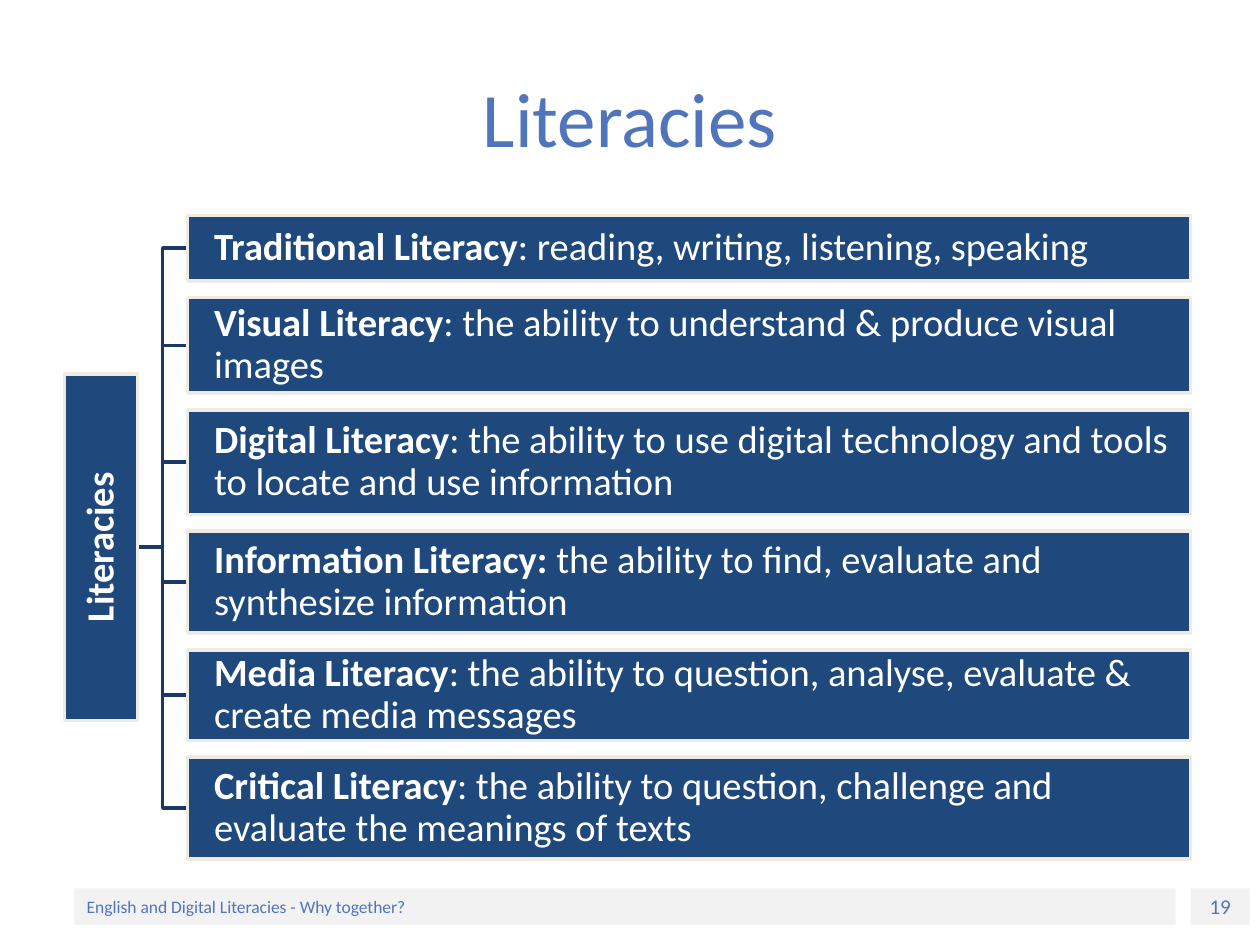
from pptx import Presentation
from pptx.dml.color import RGBColor
from pptx.enum.shapes import MSO_SHAPE
from pptx.enum.text import MSO_ANCHOR, PP_ALIGN
from pptx.util import Pt

RECT = MSO_SHAPE.RECTANGLE
MIDDLE = MSO_ANCHOR.MIDDLE
LEFT, CENTER = PP_ALIGN.LEFT, PP_ALIGN.CENTER

BLUE = RGBColor(0x50, 0x75, 0xBC)
NAVY = RGBColor(0x1F, 0x49, 0x7D)
DARK = RGBColor(0x19, 0x3A, 0x64)
CREAM = RGBColor(0xEE, 0xEC, 0xE1)
GRAY = RGBColor(0xF2, 0xF2, 0xF2)
WHITE = RGBColor(0xFF, 0xFF, 0xFF)

TITLE = "Literacies"
FOOTER = "English and Digital Literacies - Why together?"
NUMBER = "19"
ROOT = "Literacies"
ITEMS = [
    ("Traditional Literacy", ": reading, writing, listening, speaking", 37.4),
    ("Visual Literacy", ": the ability to understand & produce visual images", 54.7),
    ("Digital Literacy", ": the ability to use digital technology and tools "
     "to locate and use information", 59.8),
    ("Information Literacy: ", "the ability to find, evaluate and "
     "synthesize information", 58.3),
    ("Media Literacy", ": the ability to question, analyse, evaluate & "
     "create media messages", 51.8),
    ("Critical Literacy", ": the ability to question, challenge and "
     "evaluate the meanings of texts", 58.3),
]

TOP, GAP = 123.1, 9.5
ITEM_X, ITEM_W = 107.3, 573.1
ROOT_W, ROOT_H = 198, 41.8
ROOT_X, ROOT_Y = 57.8, 312.7
STEM_X = ROOT_X + ROOT_H / 2
BEND_X = (STEM_X + ITEM_X) / 2


def write(shape, bold, plain="", size=22, color=WHITE, align=LEFT,
          heavy=True, inset=(1.4, 1.4), space=0.9):
    frame = shape.text_frame
    frame.word_wrap = True
    frame.vertical_anchor = MIDDLE
    frame.margin_left, frame.margin_right = map(Pt, inset)
    frame.margin_top = frame.margin_bottom = Pt(1.4)
    para = frame.paragraphs[0]
    para.alignment = align
    para.line_spacing = space
    for text, weight in ((bold, heavy), (plain, False)):
        if text:
            run = para.add_run()
            run.text = text
            run.font.name = "Calibri"
            run.font.size = Pt(size)
            run.font.bold = weight
            run.font.color.rgb = color


def box(shapes, x, y, w, h, fill, line=None):
    shape = shapes.add_shape(RECT, Pt(x), Pt(y), Pt(w), Pt(h))
    shape.shadow.inherit = False
    shape.fill.solid()
    shape.fill.fore_color.rgb = fill
    if line is None:
        shape.line.fill.background()
    else:
        shape.line.color.rgb = line
        shape.line.width = Pt(2)
    return shape


def branch(shapes, y):
    pen = shapes.build_freeform(Pt(STEM_X), Pt(ROOT_Y))
    bends = [(BEND_X, ROOT_Y), (BEND_X, y), (ITEM_X, y)]
    pen.add_line_segments([(Pt(a), Pt(b)) for a, b in bends], close=False)
    shape = pen.convert_to_shape()
    shape.shadow.inherit = False
    shape.fill.background()
    shape.line.color.rgb = DARK
    shape.line.width = Pt(2)


def main():
    deck = Presentation()
    deck.slide_width, deck.slide_height = Pt(720), Pt(540)
    shapes = deck.slides.add_slide(deck.slide_layouts[6]).shapes

    page = box(shapes, 680.4, 507.6, 33.8, 20.9, GRAY)
    write(page, NUMBER, size=12, color=BLUE, align=CENTER, heavy=False, space=1)
    foot = box(shapes, 42.5, 507.6, 629.3, 20.9, GRAY)
    write(foot, FOOTER, size=10, color=BLUE, heavy=False, inset=(7.2, 7.2), space=1)
    title = shapes.add_textbox(Pt(36), Pt(21.6), Pt(648), Pt(90))
    write(title, TITLE, size=44, color=BLUE, align=CENTER, heavy=False, space=1)

    tops = [TOP + sum(item[2] + GAP for item in ITEMS[:i])
            for i in range(len(ITEMS))]
    for y, item in zip(tops, ITEMS):
        branch(shapes, y + item[2] / 2)

    root = box(shapes, ROOT_X - ROOT_W / 2, ROOT_Y - ROOT_H / 2,
               ROOT_W, ROOT_H, NAVY, CREAM)
    root.rotation = 270
    write(root, ROOT, align=CENTER)

    for y, (name, text, h) in zip(tops, ITEMS):
        card = box(shapes, ITEM_X, y, ITEM_W, h, NAVY, CREAM)
        write(card, name, text, inset=(15.1, 1.4))

    deck.save("out.pptx")


if __name__ == "__main__":
    main()
